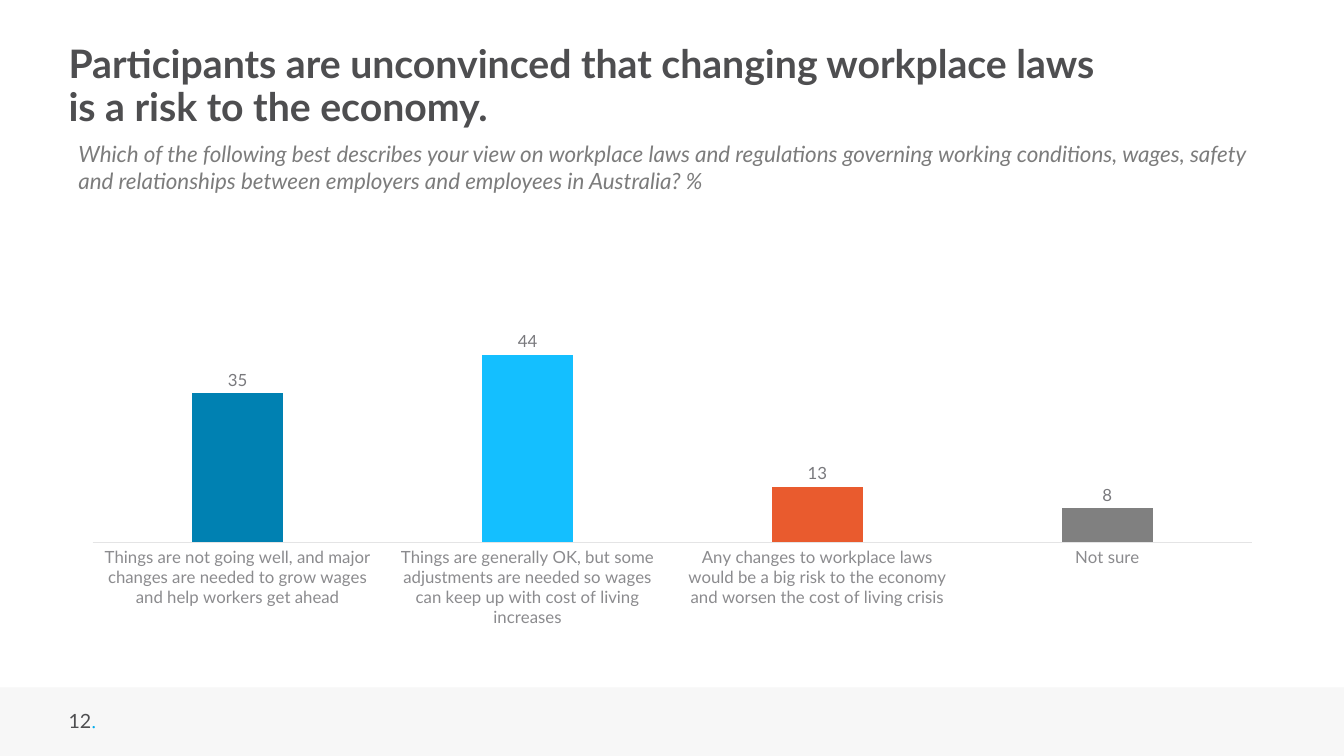
import pptx
import pptx.chart.data
import pptx.dml.color
import pptx.enum.chart
import pptx.enum.shapes
import pptx.enum.text
import pptx.oxml
import pptx.oxml.ns
import pptx.util

# Content
HEADLINE = "Participants are unconvinced that changing workplace laws is a risk to the economy."
QUESTION = ("Which of the following best describes your view on workplace laws and regulations "
            "governing working conditions, wages, safety and relationships between employers "
            "and employees in Australia? %")
PAGE_NUMBER = "12"
ANSWERS = [
    ("Things are not going well, and major changes are needed to grow wages "
     "and help workers get ahead", 35, "0081B2"),
    ("Things are generally OK, but some adjustments are needed so wages can keep up "
     "with cost of living increases", 44, "14BFFF"),
    ("Any changes to workplace laws would be a big risk to the economy "
     "and worsen the cost of living crisis", 13, "E95B2E"),
    ("Not sure", 8, "808080"),
]

# Layout in inches; the plot area is given in shares of the chart
WIDTH, HEIGHT = 13.33, 7.5
MARGIN = 0.68
FOOTER_HEIGHT = 0.68
PLOT = {"x": 0.02, "y": 0.02, "w": 0.96, "h": 0.75}
FONT = "Lato"
DARK = "4E4E50"


def colour(value):
    return pptx.dml.color.RGBColor.from_string(value)


def inches(*lengths):
    return [pptx.util.Inches(length) for length in lengths]


def style(font, size, ink, face=FONT, bold=False, italic=False):
    font.name, font.size = face, pptx.util.Pt(size)
    font.bold, font.italic = bold, italic
    font.color.rgb = colour(ink)


def write(frame, text, inset=True, spacing=None, **look):
    """Put one left-aligned run in a frame and return its paragraph."""
    frame.word_wrap = True
    frame.auto_size = pptx.enum.text.MSO_AUTO_SIZE.NONE
    if not inset:
        frame.margin_left = frame.margin_right = frame.margin_top = frame.margin_bottom = 0
    paragraph = frame.paragraphs[0]
    paragraph.alignment = pptx.enum.text.PP_ALIGN.LEFT
    if spacing:
        paragraph.line_spacing = spacing
    run = paragraph.add_run()
    run.text = text
    style(run.font, **look)
    return paragraph


deck = pptx.Presentation()
deck.slide_width, deck.slide_height = inches(WIDTH, HEIGHT)
slide = deck.slides.add_slide(deck.slide_layouts[5])

# Footer band and page number
footer = slide.shapes.add_shape(
    pptx.enum.shapes.MSO_SHAPE.RECTANGLE,
    *inches(0, HEIGHT - FOOTER_HEIGHT, WIDTH, FOOTER_HEIGHT))
footer.shadow.inherit = False
footer.fill.solid()
footer.fill.fore_color.rgb = colour("F7F7F7")
footer.line.fill.background()

page = slide.shapes.add_textbox(*inches(MARGIN, 7.03, 0.54, 0.24))
page_line = write(page.text_frame, PAGE_NUMBER, inset=False, size=14, ink=DARK)
full_stop = page_line.add_run()
full_stop.text = "."
style(full_stop.font, 14, "00ACED", face="Times New Roman")

# Headline and survey question
headline = slide.shapes.title
headline.left, headline.top, headline.width, headline.height = inches(MARGIN, 0.44, 10.3, 0.85)
headline.text_frame.vertical_anchor = pptx.enum.text.MSO_ANCHOR.MIDDLE
write(headline.text_frame, HEADLINE, inset=False, spacing=0.9, size=28, ink=DARK, bold=True)

question = slide.shapes.add_textbox(*inches(MARGIN, 1.34, 11.81, 0.64))
write(question.text_frame, QUESTION, size=16, ink="7C7C7C", italic=True)

# Column chart of answers
answer_data = pptx.chart.data.CategoryChartData()
answer_data.categories = [answer for answer, share, fill in ANSWERS]
answer_data.add_series("Series 1", [share for answer, share, fill in ANSWERS])
chart = slide.shapes.add_chart(
    pptx.enum.chart.XL_CHART_TYPE.COLUMN_CLUSTERED,
    *inches(MARGIN, 2.34, WIDTH - 2 * MARGIN + 0.01, 3.95), answer_data).chart
chart.has_legend = False
chart.has_title = False
style(chart.font, 10, DARK)

answer_axis = chart.category_axis
answer_axis.major_tick_mark = pptx.enum.chart.XL_TICK_MARK.NONE
answer_axis.format.line.color.rgb = colour("E4E4E5")
answer_axis.format.line.width = pptx.util.Pt(0.75)
style(answer_axis.tick_labels.font, 12, "8B8B8E")

share_axis = chart.value_axis
share_axis.minimum_scale, share_axis.maximum_scale = 0, 70
share_axis.has_major_gridlines = False
share_axis.visible = False

columns = chart.plots[0]
columns.gap_width, columns.overlap = 219, -27
columns.vary_by_categories = False
columns.has_data_labels = True
labels = columns.data_labels
labels.show_value = True
labels.position = pptx.enum.chart.XL_LABEL_POSITION.OUTSIDE_END
style(labels.font, 12, "79797D")

shares = columns.series[0]
shares.format.fill.solid()
shares.format.fill.fore_color.rgb = colour("E2491A")
for index, (answer, share, fill) in enumerate(ANSWERS):
    column = shares.points[index].format.fill
    column.solid()
    column.fore_color.rgb = colour(fill)

# Fixed inner plot area
plot_area = chart.element.find(".//" + pptx.oxml.ns.qn("c:plotArea"))
for old_layout in plot_area.findall(pptx.oxml.ns.qn("c:layout")):
    plot_area.remove(old_layout)
sizes = "".join(f'<c:{side} val="{value}"/>' for side, value in PLOT.items())
plot_area.insert(0, pptx.oxml.parse_xml(
    f'<c:layout {pptx.oxml.ns.nsdecls("c")}><c:manualLayout><c:layoutTarget val="inner"/>'
    f'<c:xMode val="edge"/><c:yMode val="edge"/>{sizes}</c:manualLayout></c:layout>'))

deck.save("out.pptx")
